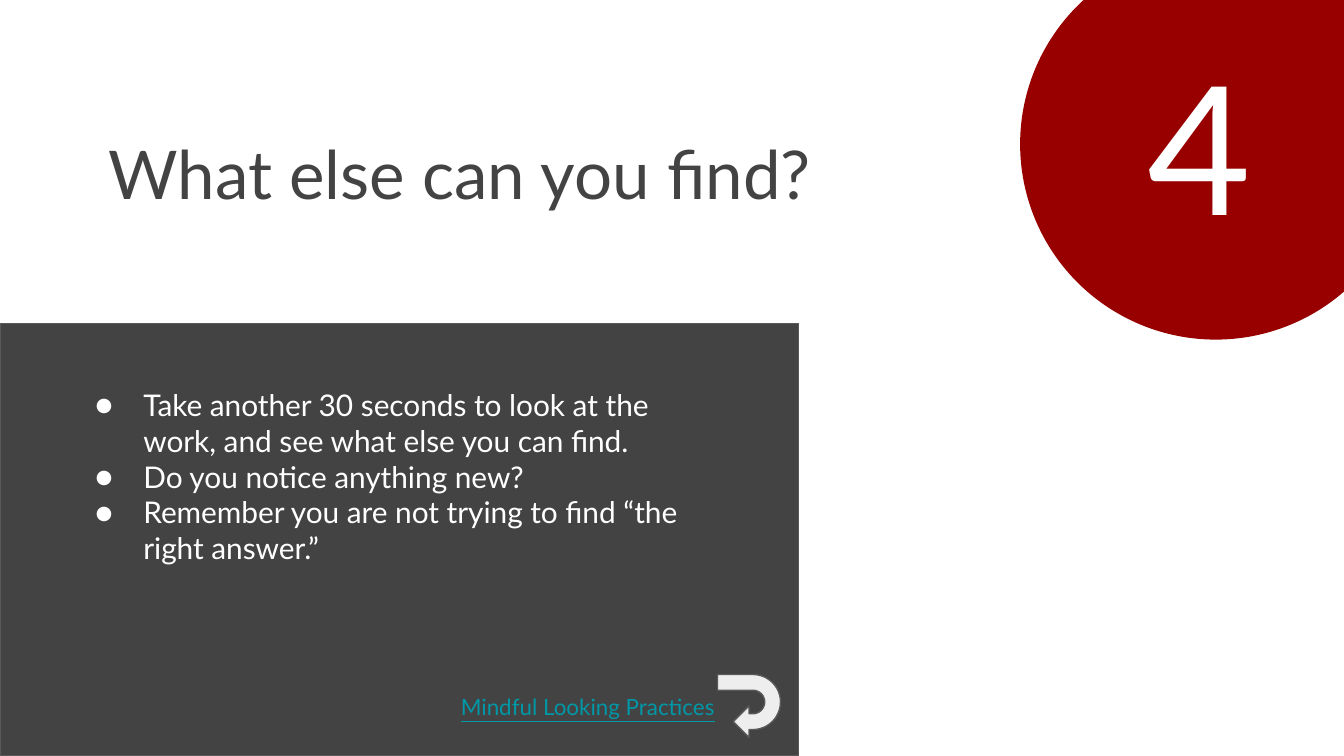
from lxml import etree
from pptx import Presentation
from pptx.dml.color import RGBColor
from pptx.enum.shapes import MSO_SHAPE
from pptx.oxml.ns import qn
from pptx.util import Cm, Pt

ELLIPSE = MSO_SHAPE.OVAL
RECTANGLE = MSO_SHAPE.RECTANGLE
U_TURN = MSO_SHAPE.U_TURN_ARROW

COLORS = {
    "red": "980000",
    "dark": "434343",
    "outline": "595959",
    "light": "EEEEEE",
    "white": "FFFFFF",
    "teal": "0097A7",
}
FONT = "Lato"
INSET = Cm(0.25)
QUESTIONS = [
    "Take another 30 seconds to look at the work, and see what else you can find.",
    "Do you notice anything new?",
    "Remember you are not trying to find “the right answer.”",
]


def rgb(name):
    return RGBColor.from_string(COLORS[name])


def add_shape(slide, kind, left, top, width, height, fill, line=None):
    sp = slide.shapes.add_shape(kind, Cm(left), Cm(top), Cm(width), Cm(height))
    sp.shadow.inherit = False
    sp.fill.solid()
    sp.fill.fore_color.rgb = rgb(fill)
    if line:
        sp.line.color.rgb = rgb(line)
        sp.line.width = Pt(0.75)
    else:
        sp.line.fill.background()
    return sp


def add_bullet(p, color):
    """Give the paragraph a round bullet with a hanging indent."""
    pPr = p._p.get_or_add_pPr()
    pPr.set("marL", str(Cm(1.27)))
    pPr.set("indent", str(-Cm(0.91)))
    bu_clr = etree.SubElement(pPr, qn("a:buClr"))
    etree.SubElement(bu_clr, qn("a:srgbClr"), val=COLORS[color])
    etree.SubElement(pPr, qn("a:buFont"), typeface=FONT)
    etree.SubElement(pPr, qn("a:buChar"), char="●")


def add_text(slide, lines, left, top, width, height, *, size, color,
             bullets=False, underline=None):
    sp = slide.shapes.add_textbox(Cm(left), Cm(top), Cm(width), Cm(height))
    tf = sp.text_frame
    tf.word_wrap = True
    tf.margin_left = tf.margin_right = INSET
    tf.margin_top = tf.margin_bottom = INSET
    for i, line in enumerate(lines):
        p = tf.add_paragraph() if i else tf.paragraphs[0]
        if bullets:
            add_bullet(p, color)
        r = p.add_run()
        r.text = line
        r.font.name = FONT
        r.font.size = Pt(size)
        r.font.color.rgb = rgb(color)
        r.font.underline = underline


def main():
    prs = Presentation()
    prs.slide_width, prs.slide_height = Cm(25.4), Cm(14.29)
    slide = prs.slides.add_slide(prs.slide_layouts[6])

    add_shape(slide, ELLIPSE, 19.28, -0.97, 7.39, 7.39, "red")
    add_shape(slide, RECTANGLE, 0, 6.11, 15.09, 8.18, "dark", "outline")
    add_text(slide, QUESTIONS, 1.19, 7.06, 12.52, 5.89,
             size=16, color="white", bullets=True)
    add_text(slide, ["What else can you find?"], 1.8, 2.26, 18.24, 2.21,
             size=36, color="dark")
    add_text(slide, ["4"], 21.44, 0.43, 5.44, 5.89, size=96, color="white")

    arrow = add_shape(slide, U_TURN, 13.56, 12.75, 1.19, 1.19, "light", "outline")
    arrow.rotation = 90
    for i, value in enumerate((0.25, 0.25, 0.25, 0.44, 0.75)):
        arrow.adjustments[i] = value
    add_text(slide, ["Mindful Looking Practices"], 8.46, 12.85, 6.1, 0.97,
             size=12, color="teal", underline=True)

    prs.save("out.pptx")


if __name__ == "__main__":
    main()
